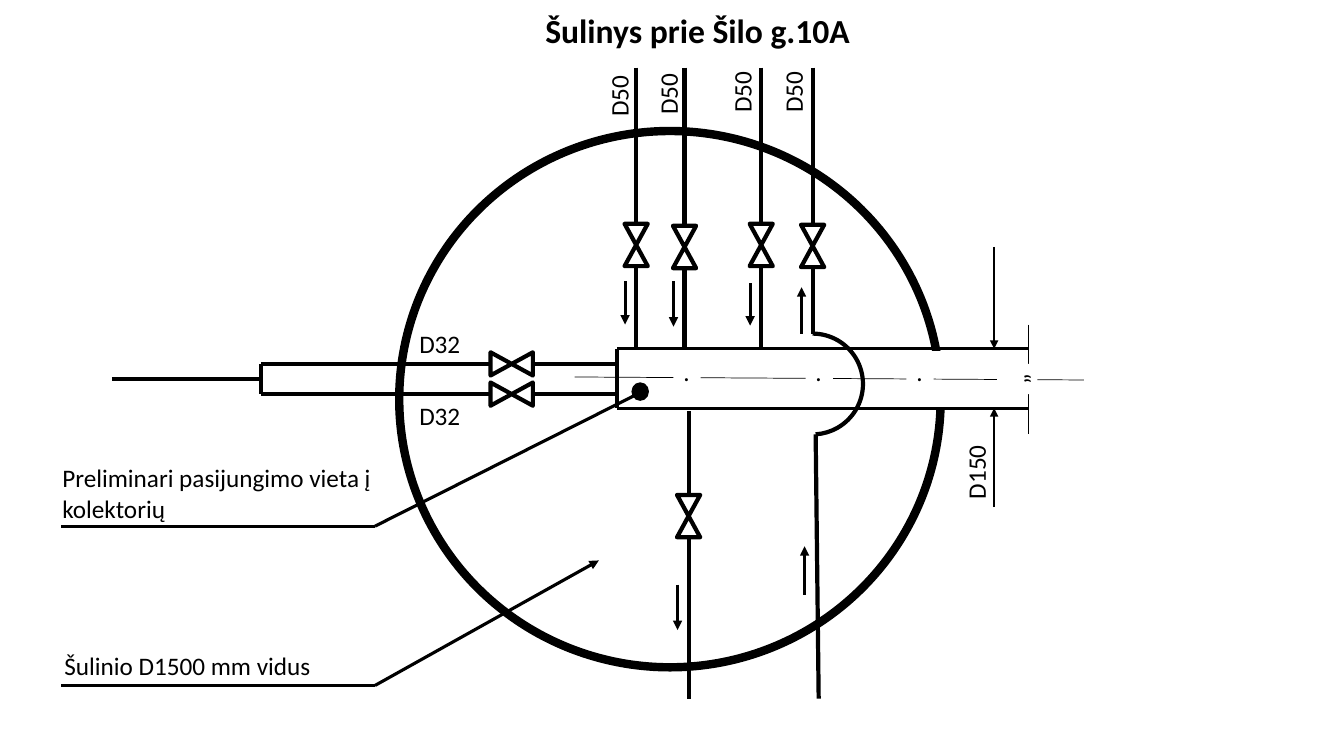
from lxml.etree import SubElement
from pptx import Presentation
from pptx.dml.color import RGBColor
from pptx.enum.shapes import MSO_CONNECTOR, MSO_SHAPE
from pptx.enum.text import MSO_ANCHOR, MSO_AUTO_SIZE, PP_ALIGN
from pptx.oxml.ns import qn
from pptx.util import Inches, Pt

COLORS = {"ink": "000000", "paper": "FFFFFF"}
LABEL = {"name": "Calibri", "size": Pt(18), "bold": False}
TITLE = {"name": "Calibri", "size": Pt(24), "bold": True}
PIPE, WALL, HAIR = 3, 2.25, 0.5
VALVE_W, VALVE_H = 0.23, 0.42


def color(name):
    return RGBColor.from_string(COLORS[name])


# Drawing helpers
def draw_line(slide, x1, y1, x2, y2, weight=PIPE, arrow=False):
    line = slide.shapes.add_connector(
        MSO_CONNECTOR.STRAIGHT, Inches(x1), Inches(y1), Inches(x2), Inches(y2))
    line.line.color.rgb = color("ink")
    line.line.width = Pt(weight)
    properties = line._element.spPr
    if arrow:
        SubElement(properties.find(qn("a:ln")), qn("a:tailEnd"), type="triangle")
    SubElement(properties, qn("a:effectLst"))


def draw_shape(slide, kind, box, weight=PIPE, fill=None, outline="ink", rotation=0):
    shape = slide.shapes.add_shape(kind, *map(Inches, box))
    shape.shadow.inherit = False
    shape.rotation = rotation
    if fill:
        shape.fill.solid()
        shape.fill.fore_color.rgb = color(fill)
    else:
        shape.fill.background()
    if outline:
        shape.line.color.rgb = color(outline)
        shape.line.width = Pt(weight)
    else:
        shape.line.fill.background()
    return shape


def write(shape, text, style=LABEL, wrap=False):
    frame = shape.text_frame
    layout = {"word_wrap": wrap, "auto_size": MSO_AUTO_SIZE.SHAPE_TO_FIT_TEXT,
              "vertical_anchor": MSO_ANCHOR.TOP}
    for name, value in layout.items():
        setattr(frame, name, value)
    paragraph = frame.paragraphs[0]
    paragraph.alignment = PP_ALIGN.LEFT
    run = paragraph.add_run()
    run.text = text
    for name, value in style.items():
        setattr(run.font, name, value)
    run.font.color.rgb = color("ink")


def draw_label(slide, text, box, style=LABEL, wrap=False, rotation=0):
    label = slide.shapes.add_textbox(*map(Inches, box))
    label.rotation = rotation
    write(label, text, style, wrap)


def draw_valve(slide, x, y, rotation=0):
    """Place a valve centred on x, y."""
    box = (x - VALVE_W / 2, y - VALVE_H / 2, VALVE_W, VALVE_H)
    draw_shape(slide, MSO_SHAPE.FLOWCHART_COLLATE, box, rotation=rotation)


# Well ring, open on the right where the collector leaves
def draw_well(slide, box):
    left, top, width, height = box
    draw_shape(slide, MSO_SHAPE.FLOWCHART_CONNECTOR, box, weight=6)
    opening = (left + width - 0.65, top + 2.19, 1.02, 0.54)
    draw_shape(slide, MSO_SHAPE.RECTANGLE, opening, 1, "paper", "paper")


# Collector pipe with its centre line, break mark and diameter
def draw_collector(slide, box):
    left, top, width, height = box
    right, bottom = left + width, top + height
    for y in (top, bottom):
        draw_line(slide, left, y, right, y, WALL)
    draw_line(slide, left, top, left, bottom)

    draw_line(slide, left - 0.42, top + 0.28, right + 0.55, top + 0.31, HAIR)
    for offset in (0.56, 2.87, 1.87):
        dot = (left + offset, top + 0.03, 0.27, 0.4)
        write(draw_shape(slide, MSO_SHAPE.RECTANGLE, dot, fill="paper", outline=None), ".")
    draw_line(slide, right, top - 0.24, right, bottom + 0.26, HAIR)
    break_mark = draw_shape(slide, MSO_SHAPE.RECTANGLE,
                            (right - 0.26, top + 0.1, 0.3, 0.4),
                            fill="paper", outline=None, rotation=270)
    write(break_mark, "„", wrap=True)

    size_x = right - 0.34
    draw_line(slide, size_x, top - 1.01, size_x, top, 1, True)
    draw_line(slide, size_x, bottom + 0.98, size_x, bottom, 1, True)
    draw_label(slide, "D150", (right - 0.89, bottom + 0.43, 0.74, 0.4), rotation=270)


# Two parallel D32 pipes joining the collector from the left
def draw_supply(slide, box):
    left, top, width, height = box
    fork, valve_x = left + 1.48, left + 3.965
    draw_line(slide, left, top + height / 2, fork, top + height / 2)
    draw_line(slide, fork, top, fork, top + height)
    for y, label_y in ((top, top - 0.4), (top + height, top + 0.31)):
        draw_line(slide, fork, y, valve_x - VALVE_H / 2, y)
        draw_valve(slide, valve_x, y, 270)
        draw_line(slide, valve_x + VALVE_H / 2, y, left + width, y)
        draw_label(slide, "D32", (left + 2.95, label_y, 0.61, 0.4))


# Four D50 pipes above the collector
def draw_upper_pipes(slide, box):
    left, top, width, height = box
    # pipe x, valve top, pipe end, label left and top, flow start and end
    pipes = (
        (0, 1.55, height, -0.48, 0.08, 2.12, 2.55),
        (0.48, 1.57, height, 0.01, 0.06, 2.12, 2.57),
        (1.24, 1.55, height, 0.74, 0.04, 2.14, 2.56),
        (width, 1.56, height - 0.15, 1.25, 0.04, 2.64, 2.18),
    )
    for offset, valve, end, label_x, label_y, start, stop in pipes:
        x = left + offset
        draw_line(slide, x, top, x, top + valve)
        draw_valve(slide, x, top + valve + VALVE_H / 2)
        draw_line(slide, x, top + valve + VALVE_H, x, top + end)
        draw_label(slide, "D50", (left + label_x, top + label_y, 0.61, 0.4), rotation=270)
        draw_line(slide, x - 0.11, top + start, x - 0.11, top + stop, WALL, True)


# Lower outlet and the return pipe that bends round the collector
def draw_lower_pipes(slide, box):
    left, top, width, height = box
    bottom, valve_y = top + height, top + 1.04
    draw_line(slide, left, top, left, valve_y - VALVE_H / 2)
    draw_valve(slide, left, valve_y)
    draw_line(slide, left, valve_y + VALVE_H / 2, left, bottom)
    draw_line(slide, left - 0.11, top + 1.72, left - 0.11, top + 2.17, WALL, True)

    bend = draw_shape(slide, MSO_SHAPE.ARC, (left + 0.73, top - 0.77, 1, 1))
    for index, angle in enumerate((162, 51.9)):
        bend.adjustments[index] = angle
    draw_line(slide, left + 1.26, top + 0.23, left + width, bottom)
    draw_line(slide, left + 1.15, top + 1.82, left + 1.15, top + 1.34, WALL, True)


# Callout: underlined text with a leader to the target
def draw_callout(slide, box, text, label_box, target, arrow=False):
    left, top, width, height = box
    baseline, elbow = top + height, left + width
    draw_line(slide, left, baseline, elbow, baseline, WALL)
    draw_line(slide, elbow, baseline, *target, WALL, arrow)
    dx, dy, label_w, label_h = label_box
    draw_label(slide, text, (left + dx, top + dy, label_w, label_h), wrap=True)


def main():
    deck = Presentation()
    deck.slide_width, deck.slide_height = Inches(13.33), Inches(7.5)
    slide = deck.slides.add_slide(deck.slide_layouts[6])

    draw_well(slide, (3.96, 1.3, 5.37, 5.32))
    draw_collector(slide, (6.12, 3.46, 4.08, 0.59))
    draw_supply(slide, (1.11, 3.61, 5.01, 0.3))
    draw_upper_pipes(slide, (6.31, 0.67, 1.75, 2.79))
    draw_lower_pipes(slide, (6.83, 4.08, 1.29, 2.85))
    draw_callout(slide, (0.61, 6.4, 3.11, 0.4), "Šulinio D1500 mm vidus",
                 (-0.07, 0, 2.82, 0.4), (5.94, 5.56), arrow=True)
    draw_callout(slide, (0.61, 4.54, 3.11, 0.68),
                 "Preliminari pasijungimo vieta į kolektorių",
                 (-0.09, 0, 3.74, 0.71), (6.34, 3.9))
    # Connection point on the collector
    draw_shape(slide, MSO_SHAPE.FLOWCHART_CONNECTOR, (6.27, 3.8, 0.16, 0.17), 1, "ink")
    draw_label(slide, "Šulinys prie Šilo g.10A", (5.31, 0.05, 3.25, 0.5), TITLE)
    deck.save("out.pptx")


if __name__ == "__main__":
    main()
